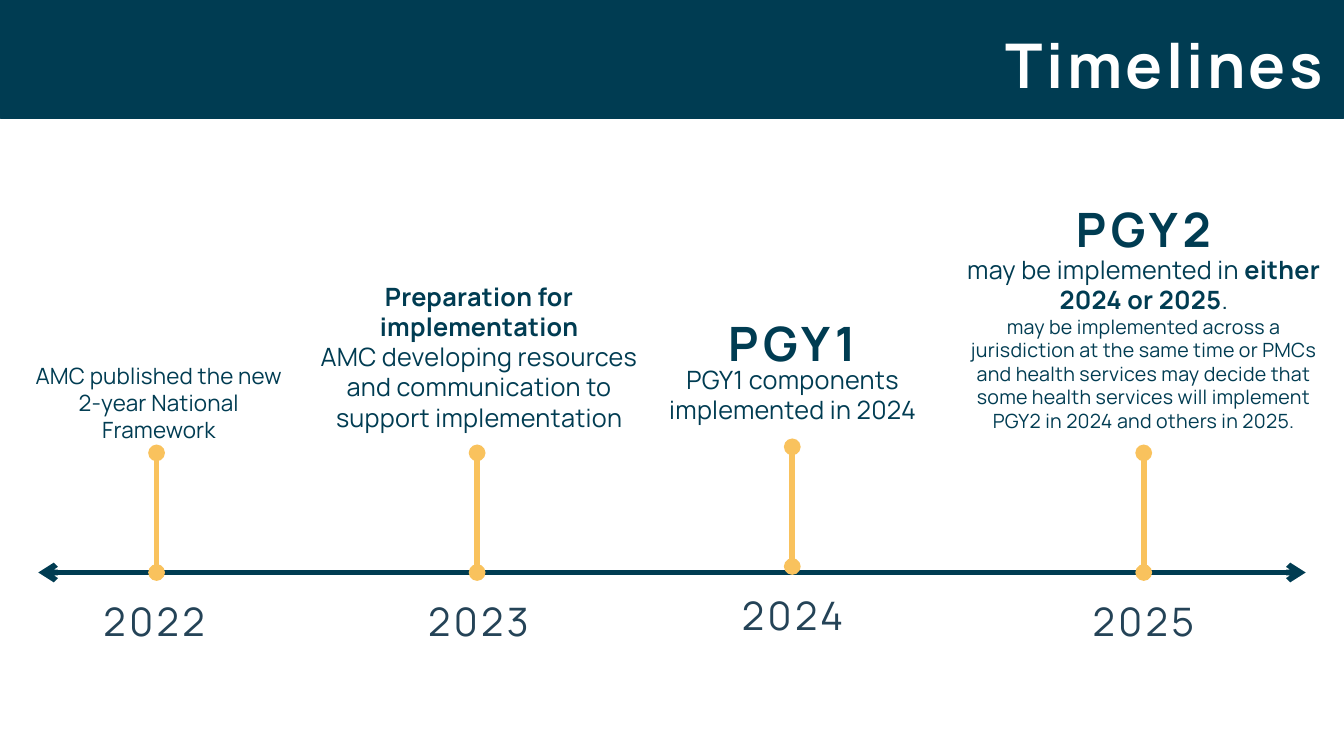
"""Build the Timelines slide on a grid of 100 columns by 100 rows."""
from dataclasses import dataclass

from lxml import etree
from pptx import Presentation
from pptx import util as u
from pptx.dml.color import RGBColor
from pptx.enum import shapes, text
from pptx.oxml.ns import qn

COLORS = {"navy": "003C52", "gold": "F9C25D", "slate": "244357", "white": "FFFFFF"}
WIDTH, HEIGHT = u.Inches(20), u.Inches(11.25)
FONT = "Manrope"
AXIS_ROW, STEM_ROWS, YEAR_GAP = 75.73, 15.82, 1.34
CENTER, LEFT, RIGHT = text.PP_ALIGN.CENTER, text.PP_ALIGN.LEFT, text.PP_ALIGN.RIGHT


@dataclass(frozen=True)
class Style:
    size: float
    color: str = "navy"
    tracking: float = 0.3
    bold: bool = False
    leading: float | None = None
    align: text.PP_ALIGN = CENTER


@dataclass(frozen=True)
class Line:
    style: Style
    runs: tuple[str, ...]
    bold_run: int | None = None


@dataclass(frozen=True)
class Block:
    column: float
    row: float
    columns: float
    rows: float
    lines: tuple[Line, ...]


@dataclass(frozen=True)
class Milestone:
    year: str
    column: float
    year_column: float
    align: text.PP_ALIGN
    blocks: tuple[Block, ...]
    lift: float = 0


TITLE = Style(66, "white", 3.7, True, 66.4, RIGHT)
HEADING = Style(50.7, "navy", 5.1, True, 65.9)
BODY = Style(27)
STRONG = Style(27, bold=True)
DETAIL = Style(21)
NOTE = Style(24, tracking=0.2, leading=29)

MILESTONES = (
    Milestone("2022", 11.65, 7.7, LEFT, (
        Block(2.4, 47.91, 18.85, 10.67, (
            Line(NOTE, ("AMC published the new 2-year National Framework",)),)),)),
    Milestone("2023", 35.5, 31.85, LEFT, (
        Block(23, 37.16, 25.3, 20.18, (
            Line(STRONG, ("Preparation for implementation",)),
            Line(BODY, ("AMC developing resources and communication to "
                        "support implementation",)))),)),
    Milestone("2024", 58.95, 54, CENTER, (
        Block(49.6, 40.89, 18.65, 7.64, (Line(HEADING, ("PGY1",)),)),
        Block(47.1, 48.18, 23.75, 8.09, (
            Line(BODY, ("PGY1 components implemented in 2024",)),))), lift=0.8),
    Milestone("2025", 85.1, 80.1, CENTER, (
        Block(75.75, 25.87, 18.65, 7.64, (Line(HEADING, ("PGY2",)),)),
        Block(71.75, 33.6, 26.7, 23.82, (
            Line(BODY, ("may be implemented in ", "either 2024 or 2025", "."), 1),
            Line(DETAIL, ("may be implemented across a jurisdiction at the same time "
                          "or PMCs and health services may decide that some health "
                          "services will implement PGY2 in 2024 and others in 2025.",)))))),
)


def x(columns: float) -> int:
    return round(WIDTH * columns / 100)


def y(rows: float) -> int:
    return round(HEIGHT * rows / 100)


def rgb(name: str) -> RGBColor:
    return RGBColor.from_string(COLORS[name])


def draw_band(slide, rows: float) -> None:
    shape = slide.shapes.add_shape(shapes.MSO_SHAPE.RECTANGLE, 0, 0, WIDTH, y(rows))
    shape.shadow.inherit = False
    shape.fill.solid()
    shape.fill.fore_color.rgb = rgb("navy")
    shape.line.color.rgb = rgb("navy")
    shape.line.width = u.Pt(1)


def draw_line(slide, start: tuple[float, float], end: tuple[float, float],
              color: str, cap: str) -> None:
    connector = slide.shapes.add_connector(
        shapes.MSO_CONNECTOR.STRAIGHT, x(start[0]), y(start[1]), x(end[0]), y(end[1]))
    connector.line.color.rgb = rgb(color)
    connector.line.width = u.Pt(6)
    properties = connector._element.spPr
    for tag in ("a:headEnd", "a:tailEnd"):
        etree.SubElement(properties.find(qn("a:ln")), qn(tag), type=cap)
    etree.SubElement(properties, qn("a:effectLst"))


def write_line(paragraph, line: Line) -> None:
    style = line.style
    paragraph.alignment = style.align
    if style.leading:
        paragraph.line_spacing = u.Pt(style.leading)
    font = paragraph.font
    font.name, font.size = FONT, u.Pt(style.size)
    font.color.rgb = rgb(style.color)
    if line.bold_run is None:
        font.bold = style.bold
    defaults = paragraph._p.pPr.find(qn("a:defRPr"))
    defaults.set("spc", str(round(style.tracking * 100)))
    for index, words in enumerate(line.runs):
        run = paragraph.add_run()
        run.text = words
        if line.bold_run is not None:
            run.font.bold = index == line.bold_run


def draw_block(slide, block: Block) -> None:
    frame = slide.shapes.add_textbox(
        x(block.column), y(block.row), x(block.columns), y(block.rows)).text_frame
    frame.margin_left = frame.margin_right = frame.margin_top = frame.margin_bottom = 0
    frame.word_wrap = True
    frame.auto_size = text.MSO_AUTO_SIZE.SHAPE_TO_FIT_TEXT
    for index, line in enumerate(block.lines):
        write_line(frame.add_paragraph() if index else frame.paragraphs[0], line)


def draw_milestone(slide, milestone: Milestone) -> None:
    base = AXIS_ROW - milestone.lift
    draw_line(slide, (milestone.column, base), (milestone.column, base - STEM_ROWS),
              "gold", "oval")
    year = Style(42, "slate", 3.7, leading=66.4, align=milestone.align)
    draw_block(slide, Block(milestone.year_column, base + YEAR_GAP, 9.95, 7.47,
                            (Line(year, (milestone.year,)),)))
    for block in milestone.blocks:
        draw_block(slide, block)


def main() -> None:
    presentation = Presentation()
    presentation.slide_width, presentation.slide_height = WIDTH, HEIGHT
    slide = presentation.slides.add_slide(presentation.slide_layouts[6])
    draw_band(slide, 15.64)
    draw_block(slide, Block(37.95, 5.16, 60.5, 8.36, (Line(TITLE, ("Timelines",)),)))
    draw_line(slide, (2.85, AXIS_ROW), (97.15, AXIS_ROW), "navy", "arrow")
    for milestone in MILESTONES:
        draw_milestone(slide, milestone)
    presentation.save("out.pptx")


if __name__ == "__main__":
    main()
